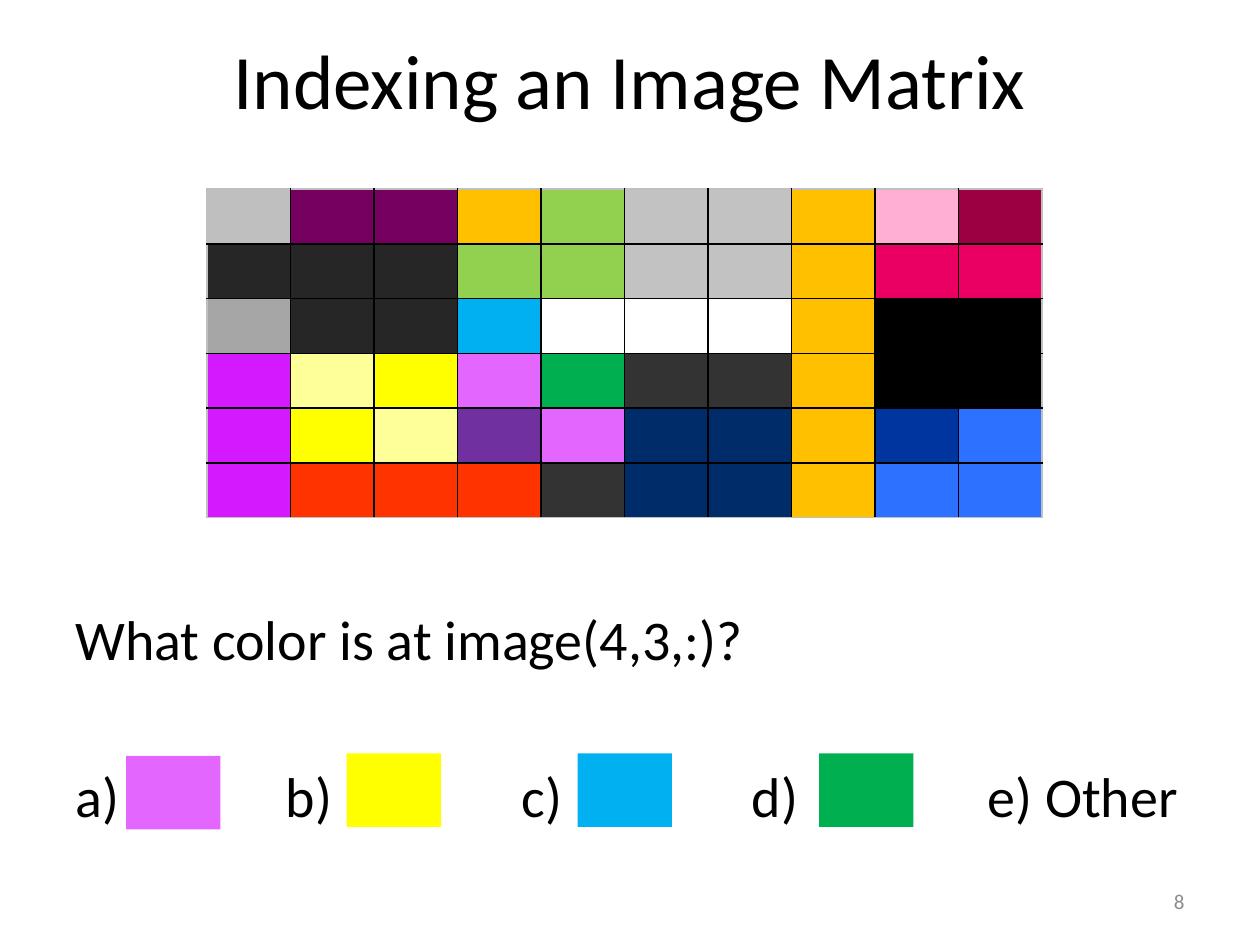
from lxml import etree
from pptx import Presentation
from pptx.dml.color import RGBColor
from pptx.enum.shapes import MSO_SHAPE
from pptx.enum.text import MSO_ANCHOR, PP_ALIGN
from pptx.oxml.ns import qn
from pptx.util import Inches, Pt

RECTANGLE = MSO_SHAPE.RECTANGLE
TOP, MIDDLE = MSO_ANCHOR.TOP, MSO_ANCHOR.MIDDLE
LEFT, CENTER, RIGHT = PP_ALIGN.LEFT, PP_ALIGN.CENTER, PP_ALIGN.RIGHT

COLORS = {
    "black": "000000", "white": "FFFFFF", "number": "8C8C8C",
    "silver": "BFBFBF", "light": "C2C2C2", "gray": "A6A6A6",
    "coal": "262626", "dark": "333333", "plum": "75005F",
    "gold": "FFC000", "lime": "92D050", "green": "00B050",
    "sky": "00B0F0", "navy": "002D6A", "royal": "00349E",
    "blue": "2C71FF", "rose": "FFAFD1", "pink": "E90062",
    "wine": "9C0042", "violet": "D519FF", "orchid": "E366FF",
    "purple": "7030A0", "cream": "FFFF99", "yellow": "FFFF00",
    "red": "FF3300",
}
IMAGE_ROWS = [
    "silver plum plum gold lime light light gold rose wine",
    "coal coal coal lime lime light light gold pink pink",
    "gray coal coal sky white white white gold black black",
    "violet cream yellow orchid green dark dark gold black black",
    "violet yellow cream purple orchid navy navy gold royal blue",
    "violet red red red dark navy navy gold blue blue",
]
ANSWERS = [("orchid", 12, 72), ("yellow", 33, 71.75),
           ("sky", 55, 71.75), ("green", 78, 71.75)]
ANSWER_TABS = (1.67, 3.54, 5.37, 7.24)


class SlideBuilder:
    """Places elements on a grid of 120 columns by 90 rows."""

    font = "Calibri"
    columns, rows = 120, 90

    def __init__(self, deck):
        self.width, self.height = deck.slide_width, deck.slide_height
        self.page = deck.slides.add_slide(deck.slide_layouts[6])

    def area(self, column, row, across, down):
        x, y = self.width / self.columns, self.height / self.rows
        return [round(v) for v in (column * x, row * y, across * x, down * y)]

    def color(self, name):
        return RGBColor.from_string(COLORS[name])

    def text(self, lines, area, size, align=LEFT, anchor=TOP, color="black"):
        frame = self.page.shapes.add_textbox(*self.area(*area)).text_frame
        frame.word_wrap = True
        frame.vertical_anchor = anchor
        for index, line in enumerate(lines):
            para = frame.add_paragraph() if index else frame.paragraphs[0]
            para.text = line
            para.alignment = align
            para.font.name = self.font
            para.font.size = Pt(size)
            para.font.color.rgb = self.color(color)
        return frame

    def tab_stops(self, para, positions):
        stops = etree.SubElement(para._p.get_or_add_pPr(), qn("a:tabLst"))
        for position in positions:
            etree.SubElement(stops, qn("a:tab"),
                             pos=str(Inches(position)), algn="l")

    def swatch(self, color, area):
        box = self.page.shapes.add_shape(RECTANGLE, *self.area(*area))
        box.shadow.inherit = False
        box.fill.solid()
        box.fill.fore_color.rgb = self.color(color)
        box.line.fill.background()

    def border(self, cell, side, color):
        line = etree.SubElement(cell._tc.get_or_add_tcPr(),
                                qn(f"a:ln{side}"), w=str(Pt(1)))
        fill = etree.SubElement(line, qn("a:solidFill"))
        etree.SubElement(fill, qn("a:srgbClr"), val=COLORS[color])

    def color_table(self, names, area):
        """Draws a table of coloured cells, black inside and silver around."""
        down, across = len(names), len(names[0])
        table = self.page.shapes.add_table(
            down, across, *self.area(*area)).table
        table.first_row = table.horz_banding = False
        for r, row in enumerate(names):
            for c, name in enumerate(row):
                cell = table.cell(r, c)
                outer = {"L": c == 0, "R": c == across - 1,
                         "T": r == 0, "B": r == down - 1}
                for side, is_outer in outer.items():
                    self.border(cell, side, "silver" if is_outer else "black")
                cell.fill.solid()
                cell.fill.fore_color.rgb = self.color(name)


def main():
    deck = Presentation()
    deck.slide_width, deck.slide_height = Inches(10), Inches(7.5)
    slide = SlideBuilder(deck)

    slide.text(["Indexing an Image Matrix"], (6, 0, 108, 15), 44,
               CENTER, MIDDLE)
    slide.text(["8"], (86, 83.4, 28, 4.8), 12, RIGHT, MIDDLE, "number")

    question = slide.text(
        ["What color is at image(4,3,:)?", "a)\tb)\tc)\td)\te) Other"],
        (6, 57, 108, 33), 32)
    choices = question.paragraphs[1]
    choices.space_before = Pt(51)
    slide.tab_stops(choices, ANSWER_TABS)

    for color, column, row in ANSWERS:
        slide.swatch(color, (column, row, 9, 7))
    slide.color_table([row.split() for row in IMAGE_ROWS],
                      (19.7, 18, 79.6, 31.3))
    deck.save("out.pptx")


if __name__ == "__main__":
    main()
